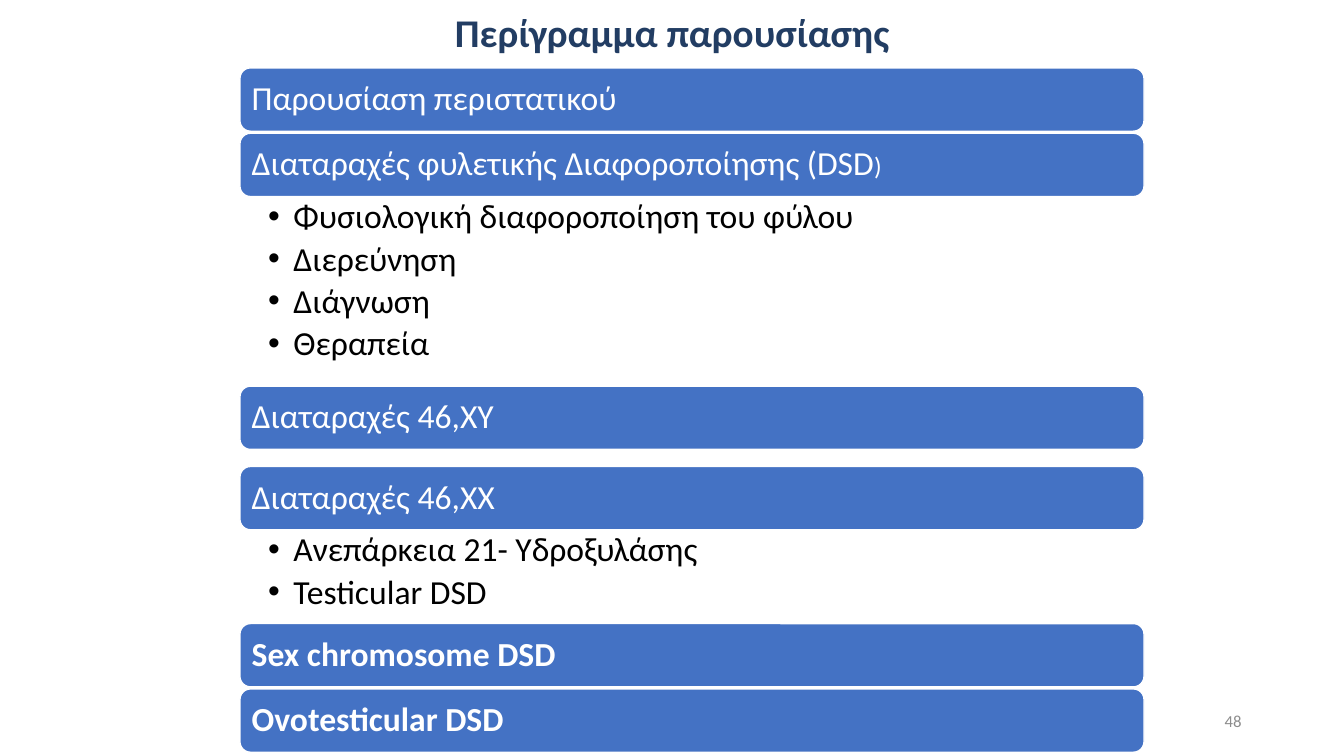
from dataclasses import dataclass

import pptx
import pptx.dml.color
import pptx.enum.shapes
import pptx.enum.text
import pptx.util
from lxml import etree

Pt = pptx.util.Pt
RGB = pptx.dml.color.RGBColor.from_string
ALIGN = pptx.enum.text.PP_ALIGN
ANCHOR = pptx.enum.text.MSO_ANCHOR
A = "{http://schemas.openxmlformats.org/drawingml/2006/main}"


@dataclass(frozen=True)
class Theme:
    font: str = "Calibri"
    title: str = "223D63"
    bar: str = "4472C4"
    light: str = "FFFFFF"
    dark: str = "000000"
    muted: str = "8C8C8C"
    title_size: float = 28
    body_size: float = 24
    small_size: float = 18
    number_size: float = 12


THEME = Theme()
BAR_H = 45.2
SECTIONS = [
    ([("Παρουσίαση περιστατικού", THEME.body_size)], False, [], 1.5),
    ([("Διαταραχές φυλετικής Διαφοροποίησης (DSD", THEME.body_size),
      (")", THEME.small_size)], False,
     ["Φυσιολογική διαφοροποίηση του φύλου", "Διερεύνηση", "Διάγνωση", "Θεραπεία"], 135.4),
    ([("Διαταραχές 46,ΧΥ", THEME.body_size)], False, [], 12.2),
    ([("Διαταραχές 46,ΧΧ", THEME.body_size)], False,
     ["Ανεπάρκεια 21- Υδροξυλάσης", "Testicular DSD"], 67),
    ([("Sex chromosome DSD", THEME.body_size)], True, [], 1.5),
    ([("Ovotesticular DSD", THEME.body_size)], True, [], 0),
]


def add_run(p, text, size, color, bold=False):
    r = p.add_run()
    r.text = text
    r.font.name = THEME.font
    r.font.size = Pt(size)
    r.font.bold = bold
    r.font.color.rgb = RGB(color)


def set_frame(sp, anchor, left, top, right, bottom):
    tf = sp.text_frame
    tf.word_wrap = True
    tf.vertical_anchor = anchor
    tf.margin_left, tf.margin_top = Pt(left), Pt(top)
    tf.margin_right, tf.margin_bottom = Pt(right), Pt(bottom)
    return tf


def add_label(s, x, y, w, h, text, size, color, align, bold=False, spacing=1.0):
    sp = s.shapes.add_textbox(Pt(x), Pt(y), Pt(w), Pt(h))
    p = set_frame(sp, ANCHOR.MIDDLE, 7.2, 3.6, 7.2, 3.6).paragraphs[0]
    p.alignment = align
    p.line_spacing = spacing
    add_run(p, text, size, color, bold)


def add_bar(s, x, y, w, h, runs, bold):
    shape = pptx.enum.shapes.MSO_SHAPE.ROUNDED_RECTANGLE
    sp = s.shapes.add_shape(shape, Pt(x), Pt(y), Pt(w), Pt(h))
    sp.shadow.inherit = False
    sp.fill.solid()
    sp.fill.fore_color.rgb = RGB(THEME.bar)
    sp.line.color.rgb = RGB(THEME.light)
    sp.line.width = Pt(1)
    p = set_frame(sp, ANCHOR.MIDDLE, 6.2, 6, 6.2, 6).paragraphs[0]
    p.alignment = ALIGN.LEFT
    p.line_spacing = 0.9
    for text, size in runs:
        add_run(p, text, size, THEME.light, bold)


def add_bullets(s, x, y, w, h, items):
    sp = s.shapes.add_textbox(Pt(x), Pt(y), Pt(w), Pt(h))
    tf = set_frame(sp, ANCHOR.TOP, 20.2, 2.2, 13.7, 2.2)
    for i, text in enumerate(items):
        p = tf.paragraphs[0] if i == 0 else tf.add_paragraph()
        p.level = 1
        p.line_spacing = 0.9
        p.space_after = Pt(4.3)
        pPr = p._p.get_or_add_pPr()
        pPr.set("marL", str(Pt(18)))
        pPr.set("indent", str(-Pt(18)))
        etree.SubElement(pPr, A + "buFont", typeface="Arial")
        etree.SubElement(pPr, A + "buChar", char="•")
        add_run(p, text, THEME.body_size, THEME.dark)


def add_outline(s, x, y, w):
    for runs, bold, items, space in SECTIONS:
        add_bar(s, x, y, w, BAR_H, runs, bold)
        y += BAR_H
        if items:
            add_bullets(s, x, y, w, space, items)
        y += space


def main():
    prs = pptx.Presentation()
    prs.slide_width, prs.slide_height = Pt(960), Pt(540)
    s = prs.slides.add_slide(prs.slide_layouts[6])
    add_label(s, 0, 0, 960, 49.7, "Περίγραμμα παρουσίασης", THEME.title_size,
              THEME.title, ALIGN.CENTER, bold=True, spacing=0.9)
    add_outline(s, 171.4, 48.5, 645.8)
    add_label(s, 678, 500.5, 216, 28.8, "48", THEME.number_size, THEME.muted, ALIGN.RIGHT)
    prs.save("out.pptx")


if __name__ == "__main__":
    main()
